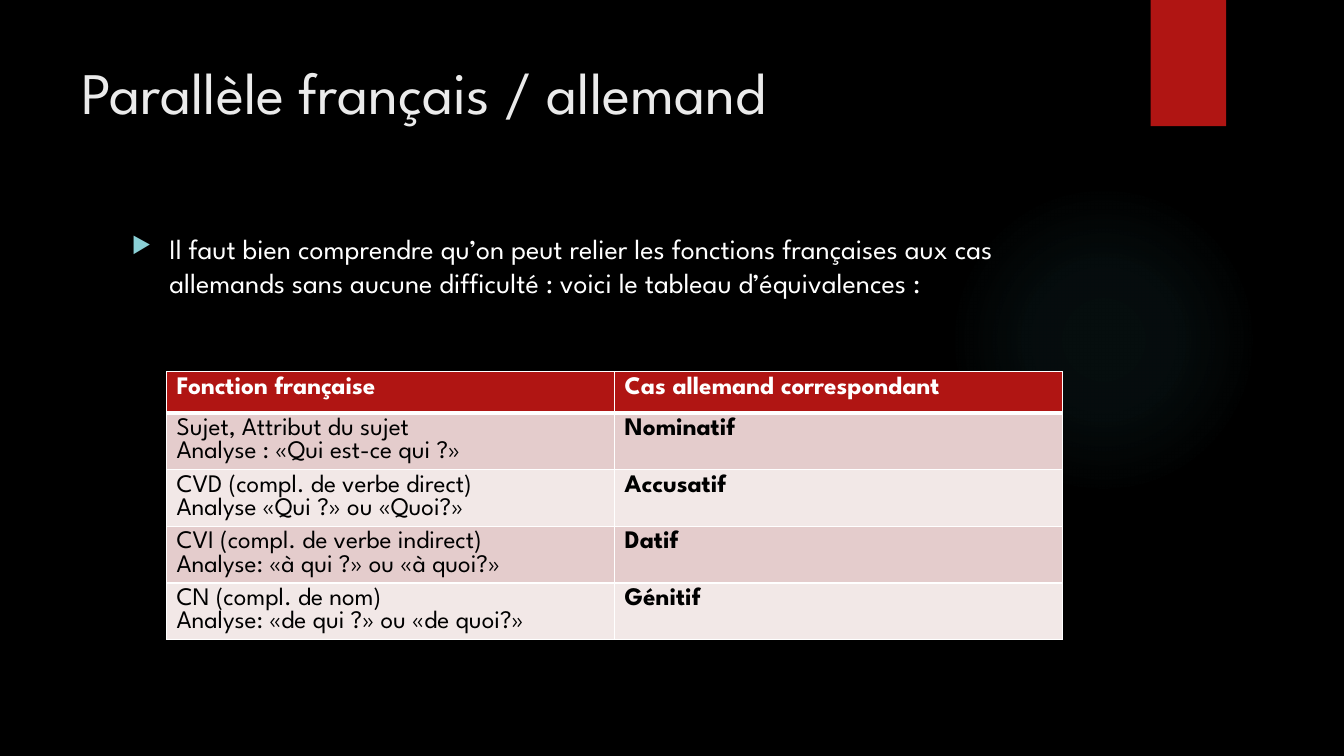
from lxml.etree import SubElement
from pptx import Presentation
from pptx.dml.color import RGBColor
from pptx.enum.shapes import MSO_SHAPE
from pptx.oxml import parse_xml
from pptx.oxml.ns import nsdecls, qn
from pptx.util import Cm, Pt

FONT = "League Spartan"
BLACK = RGBColor(0x00, 0x00, 0x00)
WHITE = RGBColor(0xFF, 0xFF, 0xFF)
PALE_GREY = RGBColor(0xEB, 0xEB, 0xEB)
RED = RGBColor(0xB0, 0x15, 0x13)
ROSE = RGBColor(0xE4, 0xCC, 0xCC)
LIGHT_ROSE = RGBColor(0xF2, 0xE8, 0xE7)
TEAL = RGBColor(0x50, 0xB9, 0xC1)
AQUA = RGBColor(0x8A, 0xD0, 0xD6)


def write(frame, text, size=18, color=BLACK, bold=False, spacing=None, bullet=None):
    """Fill a text frame, one paragraph per line of text."""
    frame.word_wrap = True
    for index, line in enumerate(text.split("\n")):
        para = frame.add_paragraph() if index else frame.paragraphs[0]
        if bullet:
            properties = para._p.get_or_add_pPr()
            properties.set("marL", str(Cm(0.95)))
            properties.set("indent", str(Cm(-0.95)))
            bullet_color = SubElement(properties, qn("a:buClr"))
            SubElement(bullet_color, qn("a:srgbClr"), val=str(AQUA))
            SubElement(properties, qn("a:buSzPct"), val="80000")
            SubElement(properties, qn("a:buChar"), char=bullet)
        if spacing:
            para.line_spacing = spacing
        span = para.add_run()
        span.text = line
        span.font.name = FONT
        span.font.size = Pt(size)
        span.font.bold = bold
        span.font.color.rgb = color


def add_border(cell, side, width):
    line = SubElement(cell._tc.get_or_add_tcPr(), qn(f"a:{side}"), w=str(Pt(width)))
    fill = SubElement(line, qn("a:solidFill"))
    SubElement(fill, qn("a:srgbClr"), val=str(WHITE))


deck = Presentation()
deck.slide_width, deck.slide_height = Cm(33.87), Cm(19.05)
page = deck.slides.add_slide(deck.slide_layouts[6])
page.background.fill.solid()
page.background.fill.fore_color.rgb = BLACK

# Decoration: faint round glow and red tab
glow = page.shapes.add_shape(MSO_SHAPE.OVAL, Cm(23.9), Cm(4.65), Cm(7.82), Cm(7.82))
glow.shadow.inherit = False
glow.line.fill.background()
stops = "".join(
    f'<a:gs pos="{position * 1000}"><a:srgbClr val="{TEAL}">'
    f'<a:alpha val="{alpha * 1000}"/></a:srgbClr></a:gs>'
    for position, alpha in [(0, 7), (36, 6), (69, 0)]
)
gradient = parse_xml(
    f'<a:gradFill {nsdecls("a")}><a:gsLst>{stops}</a:gsLst><a:path path="circle">'
    '<a:fillToRect l="50000" t="50000" r="50000" b="50000"/></a:path></a:gradFill>'
)
glow._element.spPr.find(qn("a:prstGeom")).addnext(gradient)

tab = page.shapes.add_shape(MSO_SHAPE.RECTANGLE, Cm(29), Cm(0), Cm(1.9), Cm(3.18))
tab.shadow.inherit = False
tab.fill.solid()
tab.fill.fore_color.rgb = RED
tab.line.fill.background()

# Title and introduction
title = page.shapes.add_textbox(Cm(1.8), Cm(1.27), Cm(26.14), Cm(3.89))
write(title.text_frame, "Parallèle français / allemand", size=42, color=PALE_GREY)

intro = page.shapes.add_textbox(Cm(3.07), Cm(5.72), Cm(24.84), Cm(11.66))
write(
    intro.text_frame,
    "Il faut bien comprendre qu’on peut relier les fonctions françaises aux cas "
    "allemands sans aucune difficulté : voici le tableau d’équivalences :",
    size=20, color=WHITE, bullet="▶",
)

# Table of equivalences
equivalences = [
    ("Fonction française", "Cas allemand correspondant"),
    ("Sujet, Attribut du sujet\nAnalyse : «Qui est-ce qui ?»", "Nominatif"),
    ("CVD (compl. de verbe direct)\nAnalyse «Qui ?» ou «Quoi?»", "Accusatif"),
    ("CVI (compl. de verbe indirect)\nAnalyse: «à qui ?» ou «à quoi?»", "Datif"),
    ("CN (compl. de nom)\nAnalyse: «de qui ?» ou «de quoi?»", "Génitif"),
]
table = page.shapes.add_table(
    len(equivalences), 2, Cm(4.2), Cm(9.37), Cm(22.58), Cm(5.15)
).table
for row, texts in enumerate(equivalences):
    header = row == 0
    table.rows[row].height = Cm(1.03) if header else Cm(1.43)
    for column, text in enumerate(texts):
        cell = table.cell(row, column)
        write(cell.text_frame, text, color=WHITE if header else BLACK,
              bold=header or column == 1, spacing=Pt(16.6))
        add_border(cell, "lnL", 1)
        add_border(cell, "lnR", 1)
        add_border(cell, "lnT", 3 if row == 1 else 1)
        add_border(cell, "lnB", 3 if header else 1)
        cell.fill.solid()
        cell.fill.fore_color.rgb = RED if header else ROSE if row % 2 else LIGHT_ROSE

deck.save("out.pptx")
